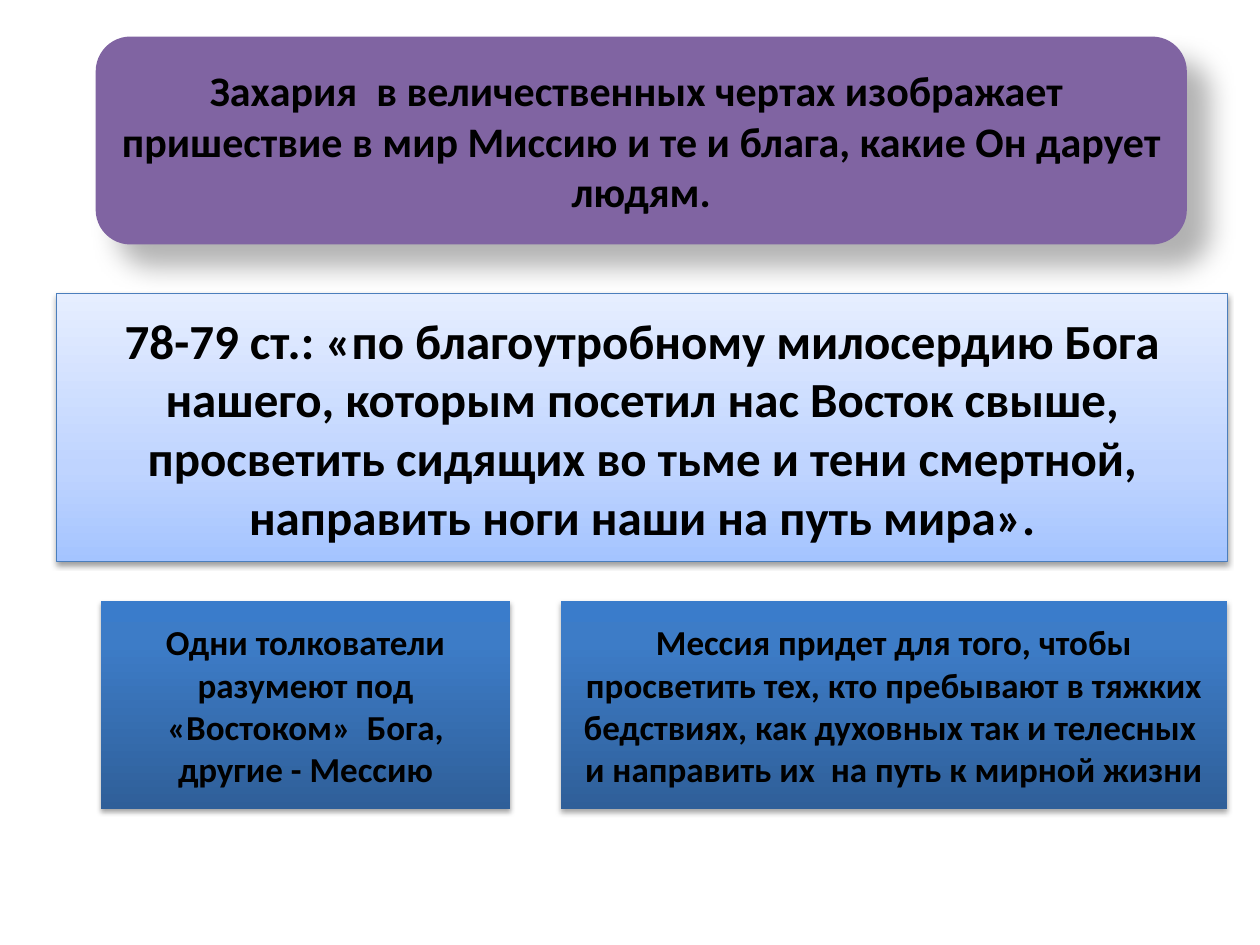
from lxml.etree import SubElement
from pptx import Presentation
from pptx.dml.color import RGBColor
from pptx.enum.shapes import MSO_SHAPE as Shape
from pptx.enum.text import MSO_ANCHOR as Anchor, PP_ALIGN as Align
from pptx.oxml.ns import qn
from pptx.util import Inches, Pt

VIOLET = "8064A2"
LIGHT = [(0, "A4C4FF"), (35, "BFD4FF"), (100, "E6EEFF")]
BLUE = [(0, "2F5F99"), (80, "3D7CC7"), (100, "3A7CCB")]


def rgb(value):
    return RGBColor.from_string(value)


class Deck:
    font = "Calibri"
    ink = "000000"

    def __init__(self, width, height):
        self.prs = Presentation()
        self.prs.slide_width = Inches(width)
        self.prs.slide_height = Inches(height)
        self.s = self.prs.slides.add_slide(self.prs.slide_layouts[6])

    def gradient(self, sp, stops):
        sp.fill.gradient()
        sp.fill.gradient_angle = 90
        gs_list = sp._element.spPr.find(".//" + qn("a:gsLst"))
        for gs in list(gs_list):
            gs_list.remove(gs)
        for pos, color in stops:
            gs = SubElement(gs_list, qn("a:gs"), pos=str(pos * 1000))
            SubElement(gs, qn("a:srgbClr"), val=color)

    def shadow(self, sp, opacity, blur, dist, angle):
        sp.shadow.inherit = False
        effects = sp._element.spPr.find(qn("a:effectLst"))
        outer = SubElement(effects, qn("a:outerShdw"), blurRad=str(Pt(blur)),
                           dist=str(Pt(dist)), dir=str(angle * 60000),
                           rotWithShape="0")
        color = SubElement(outer, qn("a:srgbClr"), val=self.ink)
        SubElement(color, qn("a:alpha"), val=str(opacity * 1000))

    def panel(self, box, lines, size, fill, shadow, kind=Shape.RECTANGLE, line=None):
        sp = self.s.shapes.add_shape(kind, *map(Inches, box))
        if isinstance(fill, str):
            sp.fill.solid()
            sp.fill.fore_color.rgb = rgb(fill)
        else:
            self.gradient(sp, fill)
        if line:
            sp.line.color.rgb = rgb(line)
            sp.line.width = Pt(0.75)
        else:
            sp.line.fill.background()
        self.shadow(sp, *shadow)
        self.text(sp.text_frame, lines, size)

    def text(self, tf, lines, size):
        tf.word_wrap = True
        tf.vertical_anchor = Anchor.MIDDLE
        tf.text = "\n".join(lines)
        for p in tf.paragraphs:
            p.alignment = Align.CENTER
            p.font.name = self.font
            p.font.size = Pt(size)
            p.font.bold = True
            p.font.color.rgb = rgb(self.ink)


def main():
    deck = Deck(10, 7.5)
    deck.panel((0.76, 0.29, 8.66, 1.65),
               ["Захария  в величественных чертах изображает  пришествие в мир "
                "Миссию и те и блага, какие Он дарует людям."],
               24, VIOLET, (30, 15, 18, 45), kind=Shape.ROUNDED_RECTANGLE)
    deck.panel((0.45, 2.33, 9.29, 2.13),
               ["78-79 ст.: «по благоутробному милосердию Бога нашего, "
                "которым посетил нас Восток свыше,",
                "просветить сидящих во тьме и тени смертной, "
                "направить ноги наши на путь мира»."],
               28, LIGHT, (38, 3.1, 1.6, 90), line="4B7EBC")
    notes = [
        (4.45, 5.29, "Мессия придет для того, чтобы просветить тех, кто пребывают "
                     "в тяжких бедствиях, как духовных так и телесных  и направить "
                     "их  на путь к мирной жизни"),
        (0.8, 3.25, "Одни толкователи разумеют под «Востоком»  Бога, "
                    "другие - Мессию"),
    ]
    for left, width, note in notes:
        deck.panel((left, 4.77, width, 1.65), [note], 20, BLUE, (35, 3.1, 1.8, 90))
    deck.prs.save("out.pptx")


if __name__ == "__main__":
    main()
